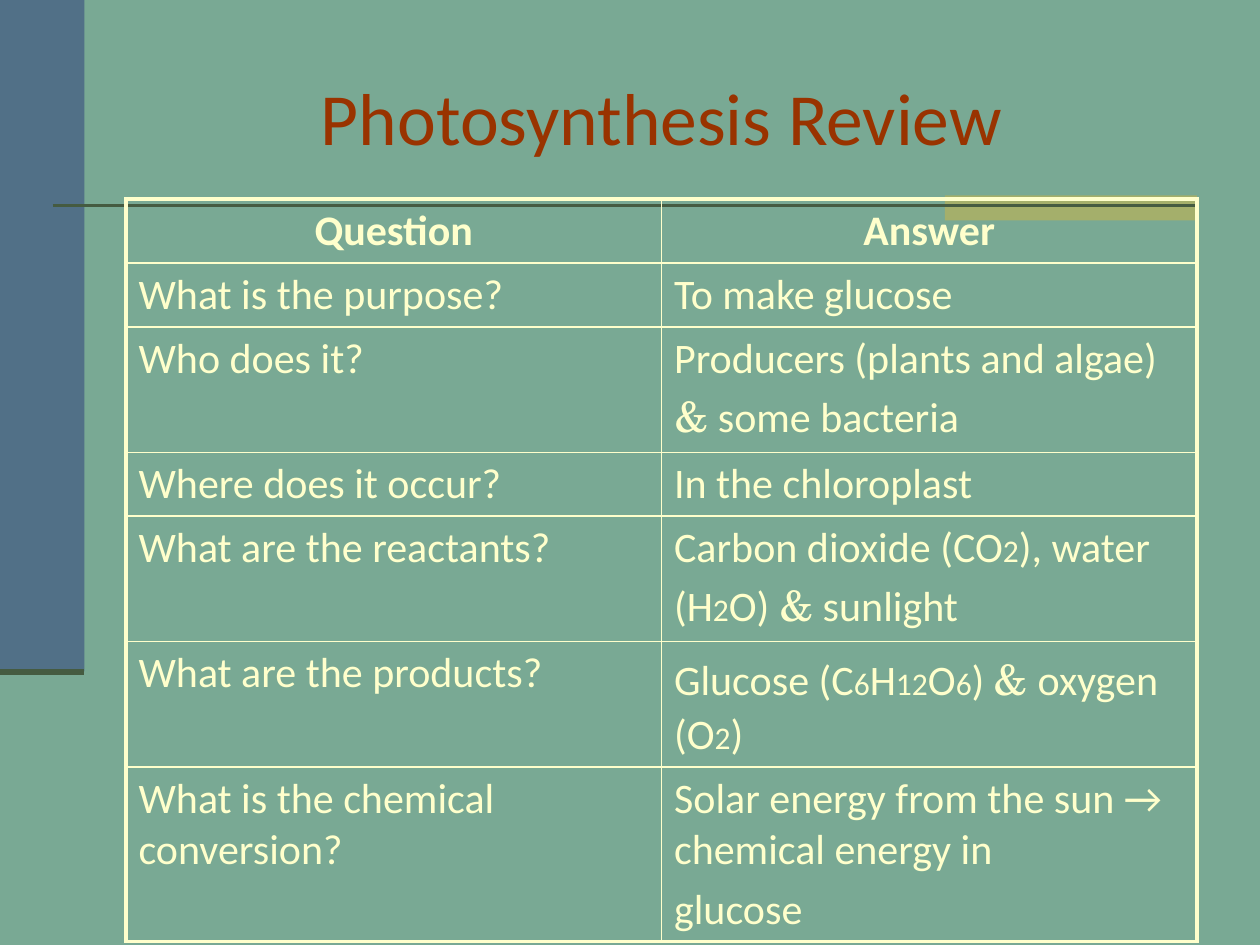
from itertools import groupby

from lxml.etree import SubElement
from pptx import Presentation
from pptx.dml.color import RGBColor
from pptx.enum.shapes import MSO_CONNECTOR as Connector, MSO_SHAPE as Shape
from pptx.enum.text import MSO_ANCHOR as Anchor, PP_ALIGN as Align
from pptx.oxml import parse_xml
from pptx.oxml.ns import nsdecls, qn
from pptx.util import Inches, Pt

THEME = {
    "background": "79A994", "band": "517087", "accent": "A4AF6B", "rule": "455B41",
    "title": "993300", "text": "FFFFCC",
    "font": "Calibri", "ampersand_font": "TeX Gyre Schola",
    "title_size": 42, "text_size": 24, "subscript_size": 18,
    "outer_border": 2.25, "inner_border": 1,
}
ROWS = [
    ("Question", "Answer"),
    ("What is the purpose?", "To make glucose"),
    ("Who does it?", "Producers (plants and algae) & some bacteria"),
    ("Where does it occur?", "In the chloroplast"),
    ("What are the reactants?", "Carbon dioxide (CO2), water (H2O) & sunlight"),
    ("What are the products?", "Glucose (C6H12O6) & oxygen (O2)"),
    ("What is the chemical conversion?",
     "Solar energy from the sun → chemical energy in\nglucose"),
]


def add_span(para, text, color, **formats):
    span = para.add_run()
    span.text = text
    span.font.color.rgb = RGBColor.from_string(THEME[color])
    for name, value in formats.items():
        setattr(span.font, name, value)


def set_borders(cell, widths):
    """Put the side lines, given in schema order, ahead of the cell's fill."""
    properties = cell._tc.get_or_add_tcPr()
    for place, (side, width) in enumerate(widths.items()):
        properties.insert(place, parse_xml(
            f'<a:ln{side} {nsdecls("a")} w="{Pt(width)}"><a:solidFill>'
            f'<a:srgbClr val="{THEME["text"]}"/></a:solidFill></a:ln{side}>'))


deck = Presentation()
deck.slide_width, deck.slide_height = Inches(10), Inches(7.5)
page = deck.slides.add_slide(deck.slide_layouts[5])
page.background.fill.solid()
page.background.fill.fore_color.rgb = RGBColor.from_string(THEME["background"])

# Side band, accent block and rules
for color, area in (("band", (0, 0, 0.67, 5.33)), ("accent", (7.5, 1.55, 2, 0.2))):
    box = page.shapes.add_shape(Shape.RECTANGLE, *map(Inches, area))
    box.shadow.inherit = False
    box.fill.solid()
    box.fill.fore_color.rgb = RGBColor.from_string(THEME[color])
    box.line.fill.background()

for left, right, height, width in ((0.42, 9.5, 1.63, 1.5), (0, 0.67, 5.33, 3.5)):
    rule = page.shapes.add_connector(
        Connector.STRAIGHT, *map(Inches, (left, height, right, height)))
    rule.line.color.rgb = RGBColor.from_string(THEME["rule"])
    rule.line.width = Pt(width)
    SubElement(rule._element.spPr, qn("a:effectLst"))

# Title
title = page.shapes.title
for name, value in {"left": 1, "top": 0.3, "width": 8.5, "height": 1.25}.items():
    setattr(title, name, Inches(value))
title.text_frame.vertical_anchor = Anchor.MIDDLE
title.text_frame.word_wrap = True
para = title.text_frame.paragraphs[0]
para.alignment = Align.CENTER
add_span(para, "Photosynthesis Review", "title",
         name=THEME["font"], size=Pt(THEME["title_size"]))

# Question and answer table
last_row, last_column = len(ROWS) - 1, len(ROWS[0]) - 1
table = page.shapes.add_table(len(ROWS), len(ROWS[0]), Inches(1), Inches(1.58),
                              Inches(8.5), Inches(0.44 * len(ROWS))).table
table.horz_banding = False
table.first_row = False
for row, texts in enumerate(ROWS):
    for column, text in enumerate(texts):
        cell = table.cell(row, column)
        cell.fill.background()
        outer_sides = {"L": column == 0, "R": column == last_column,
                       "T": row == 0, "B": row == last_row}
        set_borders(cell, {side: THEME["outer_border" if outer else "inner_border"]
                           for side, outer in outer_sides.items()})
        for number, line in enumerate(text.split("\n")):
            frame = cell.text_frame
            para = frame.add_paragraph() if number else frame.paragraphs[0]
            para.alignment = Align.CENTER if row == 0 else Align.LEFT
            spacing = SubElement(para._p.get_or_add_pPr(), qn("a:spcBef"))
            SubElement(spacing, qn("a:spcPct"), val="20000")
            # Digits are subscripts; the ampersand has its own font
            for (digit, ampersand), letters in groupby(
                    line, lambda letter: (letter.isdigit(), letter == "&")):
                add_span(para, "".join(letters), "text", bold=row == 0,
                         name=THEME["ampersand_font" if ampersand else "font"],
                         size=Pt(THEME["subscript_size" if digit else "text_size"]))

deck.save("out.pptx")
